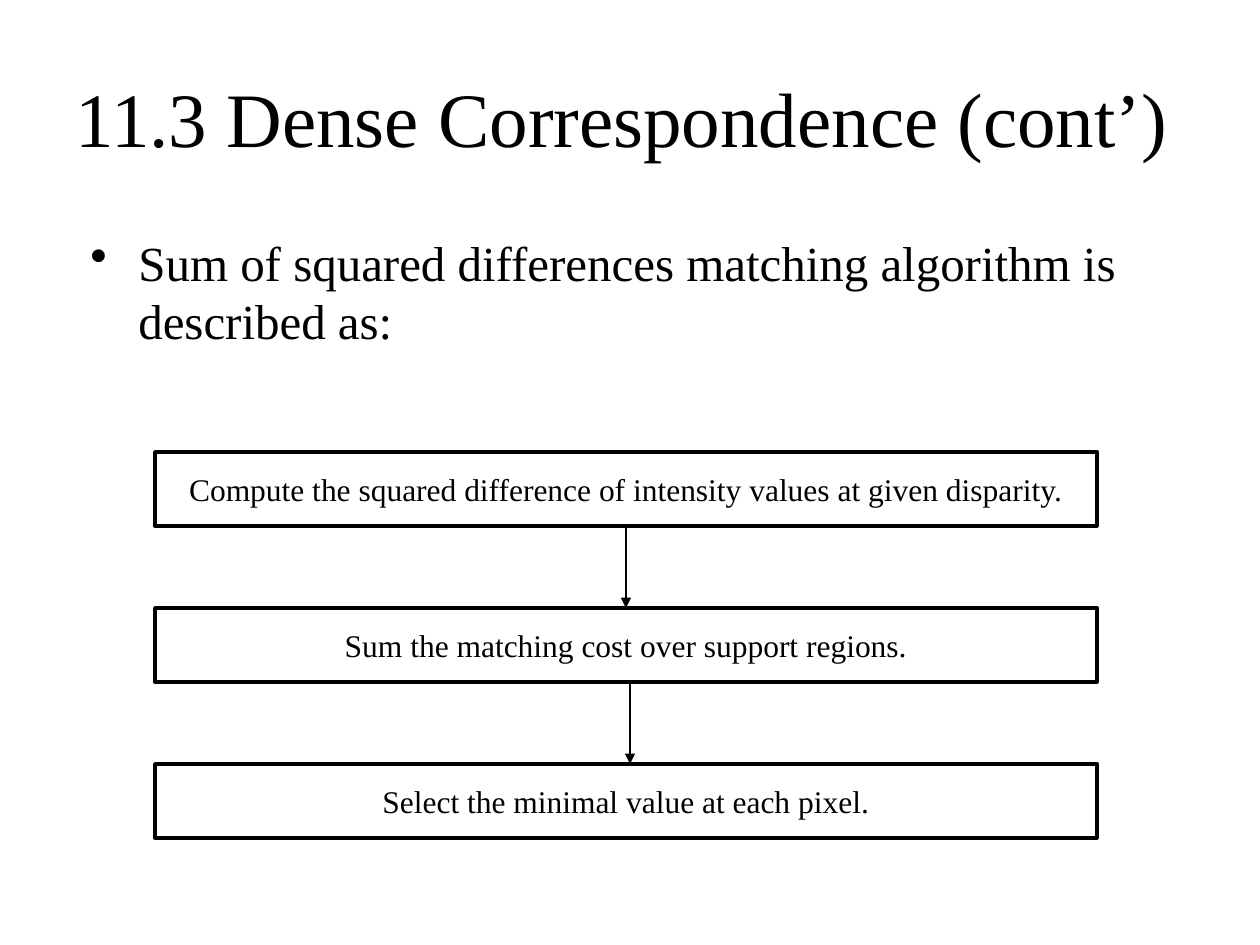
import pptx
import pptx.util
import pptx.dml.color
import pptx.enum.shapes
import pptx.enum.text
import pptx.oxml.ns
from lxml import etree

HUES = {"ink": "000000", "paper": "FFFFFF"}
FONT = "Times New Roman"
ALIGN = pptx.enum.text.PP_ALIGN
MIDDLE = pptx.enum.text.MSO_ANCHOR.MIDDLE
STEPS = [
    "Compute the squared difference of intensity values at given disparity.",
    "Sum the matching cost over support regions.",
    "Select the minimal value at each pixel.",
]
LEFT, TOP, WIDE, HIGH, PITCH = 155, 452, 942, 74, 156


def px(count):
    """Turn pixels into EMU."""
    return pptx.util.Emu(round(count * 914400 / 126))


def hue(name):
    """Give the named colour."""
    return pptx.dml.color.RGBColor.from_string(HUES[name])


def add_tag(parent, tag, **attrs):
    """Append a drawing element to its parent."""
    return etree.SubElement(parent, pptx.oxml.ns.qn(tag), attrs)


def write(shape, text, size, align):
    """Put one paragraph of text in a shape."""
    shape.text_frame.word_wrap = True
    para = shape.text_frame.paragraphs[0]
    para.text = text
    para.alignment = align
    para.font.name = FONT
    para.font.size = pptx.util.Pt(size)
    para.font.color.rgb = hue("ink")


def set_title(slide, text):
    """Place and fill the title."""
    title = slide.shapes.title
    title.left, title.top, title.width, title.height = map(px, (63, 38, 1134, 158))
    write(title, text, 44, ALIGN.LEFT)
    title.text_frame.vertical_anchor = MIDDLE


def add_bullet(slide, text):
    """Add the bulleted lead-in."""
    box = slide.shapes.add_textbox(*map(px, (63, 220, 1134, 624)))
    box.text_frame.margin_top = px(12)
    props = box.text_frame.paragraphs[0]._p.get_or_add_pPr()
    props.set("marL", str(px(63)))
    props.set("indent", str(px(-48)))
    add_tag(props, "a:buChar", char="•")
    write(box, text, 28, ALIGN.LEFT)


def add_step(slide, row, text):
    """Add one framed step of the flow."""
    kind = pptx.enum.shapes.MSO_SHAPE.RECTANGLE
    box = slide.shapes.add_shape(kind, *map(px, (LEFT, TOP + row * PITCH, WIDE, HIGH)))
    box.shadow.inherit = False
    box.fill.solid()
    box.fill.fore_color.rgb = hue("paper")
    box.line.color.rgb = hue("ink")
    box.line.width = pptx.util.Pt(2)
    write(box, text, 18, ALIGN.CENTER)
    box.text_frame.vertical_anchor = MIDDLE
    return box


def add_arrow(slide, row, x):
    """Add an arrow from one row down to the next."""
    ends = (x, TOP + row * PITCH + HIGH, x, TOP + (row + 1) * PITCH)
    kind = pptx.enum.shapes.MSO_CONNECTOR.STRAIGHT
    arrow = slide.shapes.add_connector(kind, *map(px, ends))
    arrow.line.color.rgb = hue("ink")
    arrow.line.width = pptx.util.Pt(0.75)
    add_tag(arrow.line._get_or_add_ln(), "a:tailEnd", type="triangle")
    add_tag(arrow._element.spPr, "a:effectLst")
    return arrow


def main():
    """Build the slide and save it."""
    deck = pptx.Presentation()
    deck.slide_width, deck.slide_height = px(1260), px(945)
    slide = deck.slides.add_slide(deck.slide_layouts[5])
    set_title(slide, "11.3 Dense Correspondence (cont’)")
    add_bullet(slide, "Sum of squared differences matching algorithm is described as:")
    boxes = [add_step(slide, row, text) for row, text in enumerate(STEPS)]
    first = add_arrow(slide, 0, LEFT + WIDE // 2)
    first.begin_connect(boxes[0], 2)
    first.end_connect(boxes[1], 0)
    add_arrow(slide, 1, 630)
    deck.save("out.pptx")


if __name__ == "__main__":
    main()
